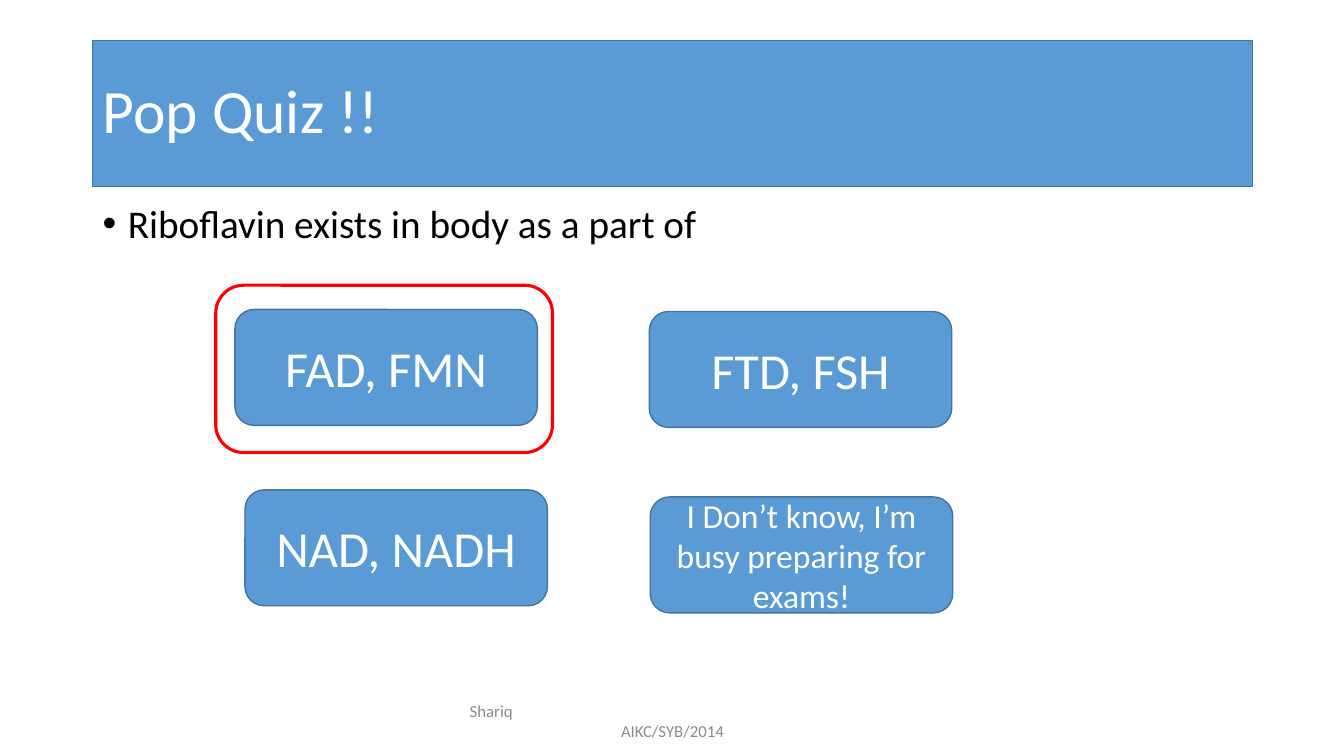
from dataclasses import dataclass

from lxml.etree import SubElement
from pptx import Presentation
from pptx.dml.color import RGBColor
from pptx.enum.shapes import MSO_SHAPE
from pptx.enum.text import MSO_ANCHOR, MSO_AUTO_SIZE, PP_ALIGN
from pptx.oxml.ns import qn
from pptx.util import Inches, Pt


@dataclass(frozen=True)
class Theme:
    font: str = "Calibri"
    blue: str = "5B9BD5"
    outline: str = "43739E"
    highlight: str = "FF0000"
    white: str = "FFFFFF"
    black: str = "000000"
    gray: str = "8C8C8C"
    title_size: int = 44
    question_size: int = 28
    answer_size: int = 36
    long_answer_size: int = 24
    footer_size: int = 12


THEME = Theme()
TITLE = "Pop Quiz !!"
QUESTION = "Riboflavin exists in body as a part of"
FOOTER = ["Shariq", "AIKC/SYB/2014"]
ANSWERS = [
    ("FAD, FMN", 2.33, 3.07, THEME.answer_size),
    ("I Don’t know, I’m busy preparing for exams!", 6.45, 4.93, THEME.long_answer_size),
    ("FTD, FSH", 6.44, 3.09, THEME.answer_size),
    ("NAD, NADH", 2.43, 4.86, THEME.answer_size),
]
ANSWER_SIZE = (3, 1.15)
TITLE_BOX = (0.92, 0.4, 11.5, 1.45)
QUESTION_BOX = (0.92, 1.98, 11.5, 0.79)
FOOTER_BOX = (4.42, 6.95, 4.5, 0.4)
CORRECT_BOX = (2.14, 2.83, 3.34, 1.66)


def write(shape, lines, *, size, color, align=PP_ALIGN.LEFT,
          anchor=MSO_ANCHOR.MIDDLE, line_spacing=1.0, space_before=0):
    frame = shape.text_frame
    frame.text = "\n".join(lines)
    frame.word_wrap = True
    frame.auto_size = MSO_AUTO_SIZE.NONE
    frame.vertical_anchor = anchor
    for paragraph in frame.paragraphs:
        paragraph.alignment = align
        paragraph.line_spacing = line_spacing
        paragraph.space_before = Pt(space_before)
        font = paragraph.runs[0].font
        font.name = THEME.font
        font.size = Pt(size)
        font.color.rgb = RGBColor.from_string(color)
    return frame.paragraphs


def paint(shape, *, fill=None, line=THEME.outline, width=1):
    if fill:
        shape.fill.solid()
        shape.fill.fore_color.rgb = RGBColor.from_string(fill)
    else:
        shape.fill.background()
    shape.line.color.rgb = RGBColor.from_string(line)
    shape.line.width = Pt(width)


def indent(paragraph, margin, first_line=0):
    properties = paragraph._p.get_or_add_pPr()
    properties.set("marL", str(Inches(margin)))
    properties.set("indent", str(Inches(first_line)))
    return properties


def add_rounded(slide, box):
    rounded = slide.shapes.add_shape(MSO_SHAPE.ROUNDED_RECTANGLE, *map(Inches, box))
    rounded.shadow.inherit = False
    return rounded


def main():
    presentation = Presentation()
    presentation.slide_width = Inches(13.33)
    presentation.slide_height = Inches(7.5)
    slide = presentation.slides.add_slide(presentation.slide_layouts[5])

    title = slide.shapes.title
    title.left, title.top, title.width, title.height = map(Inches, TITLE_BOX)
    paint(title, fill=THEME.blue)
    write(title, [TITLE], size=THEME.title_size, color=THEME.white, line_spacing=0.9)

    question = slide.shapes.add_textbox(*map(Inches, QUESTION_BOX))
    question_line = write(question, [QUESTION], size=THEME.question_size,
                          color=THEME.black, anchor=MSO_ANCHOR.TOP,
                          line_spacing=0.9, space_before=10)[0]
    bullet_properties = indent(question_line, 0.25, -0.25)
    SubElement(bullet_properties, qn("a:buFont"), typeface="Arial")
    SubElement(bullet_properties, qn("a:buChar"), char="•")

    footer = slide.shapes.add_textbox(*map(Inches, FOOTER_BOX))
    author, course = write(footer, FOOTER, size=THEME.footer_size,
                           color=THEME.gray, align=PP_ALIGN.CENTER)
    author.alignment = PP_ALIGN.LEFT
    indent(author, 0.14)

    for answer, left, top, size in ANSWERS:
        button = add_rounded(slide, (left, top, *ANSWER_SIZE))
        paint(button, fill=THEME.blue)
        write(button, [answer], size=size, color=THEME.white, align=PP_ALIGN.CENTER)

    paint(add_rounded(slide, CORRECT_BOX), line=THEME.highlight, width=2.25)
    presentation.save("out.pptx")


if __name__ == "__main__":
    main()
